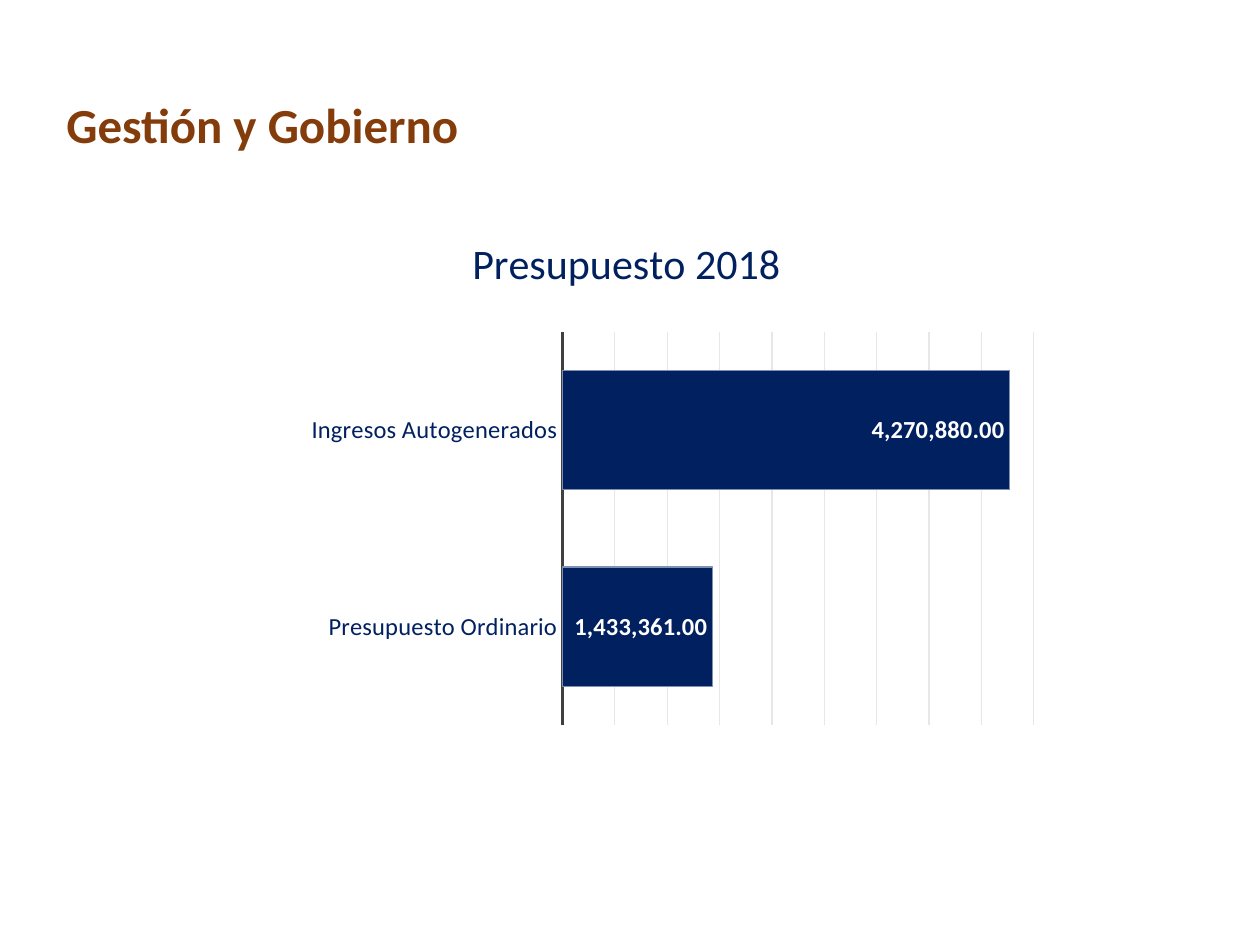
from lxml import etree
from pptx import Presentation
from pptx.chart.data import CategoryChartData
from pptx.dml.color import RGBColor
from pptx.enum import chart as kinds
from pptx.oxml import ns
from pptx.util import Cm, Pt

HEADING = "Gestión y Gobierno"
CHART_TITLE = "Presupuesto 2018"
BUDGET = {"Presupuesto Ordinario": 1433361, "Ingresos Autogenerados": 4270880}
NUMBER_FORMAT = "#,##0.00"

FONT = "Calibri"
BROWN = RGBColor(0x84, 0x3C, 0x0B)
NAVY = RGBColor(0x00, 0x20, 0x60)
WHITE = RGBColor(0xFF, 0xFF, 0xFF)
AXIS_GREY = RGBColor(0x40, 0x40, 0x40)
GRID_GREY = RGBColor(0xE7, 0xE7, 0xE7)
BAR_EDGE = RGBColor(0x7F, 0x8F, 0xAF)


def style(font, size, color, bold=False):
    font.name, font.size, font.bold = FONT, Pt(size), bold
    font.color.rgb = color


def place(parent, index, **settings):
    """Give a chart part a manual layout, in fractions of the chart."""
    for old in parent.findall(ns.qn("c:layout")):
        parent.remove(old)
    layout = etree.Element(ns.qn("c:layout"))
    manual = etree.SubElement(layout, ns.qn("c:manualLayout"))
    for name, value in settings.items():
        etree.SubElement(manual, ns.qn(f"c:{name}"), val=str(value))
    parent.insert(index, layout)


def add_heading(slide):
    box = slide.shapes.add_textbox(Cm(1.09), Cm(1.78), Cm(15.14), Cm(1.45))
    box.text_frame.word_wrap = True
    para = box.text_frame.paragraphs[0]
    para.text = HEADING
    style(para.font, 28, BROWN, bold=True)


def add_budget_chart(slide):
    data = CategoryChartData(number_format=NUMBER_FORMAT)
    data.categories = list(BUDGET)
    data.add_series("Presupuesto", list(BUDGET.values()))
    chart = slide.shapes.add_chart(
        kinds.XL_CHART_TYPE.BAR_CLUSTERED,
        Cm(3.63), Cm(4.04), Cm(17.93), Cm(11.02), data).chart
    style(chart.font, 14, NAVY)
    chart.has_legend = False

    chart.has_title = True
    title = chart.chart_title
    title.include_in_layout = False
    para = title.text_frame.paragraphs[0]
    para.text = CHART_TITLE
    style(para.font, 24, NAVY)
    place(title._element, 1, xMode="edge", yMode="edge", x=0.32, y=0.05)
    place(chart.plots[0]._element.getparent(), 0, layoutTarget="inner",
          xMode="edge", yMode="edge", x=0.43, y=0.24, w=0.53, h=0.72)

    categories = chart.category_axis
    categories.major_tick_mark = kinds.XL_TICK_MARK.NONE
    style(categories.tick_labels.font, 14, NAVY)
    categories.format.line.color.rgb = AXIS_GREY
    categories.format.line.width = Pt(1.5)

    values = chart.value_axis
    values.visible = False
    values.minimum_scale, values.maximum_scale = 0, 4500000
    values.major_unit = 500000
    values.has_major_gridlines = True
    values.major_gridlines.format.line.color.rgb = GRID_GREY
    values.major_gridlines.format.line.width = Pt(0.75)

    plot = chart.plots[0]
    plot.gap_width = 65
    plot.vary_by_categories = False
    bars = plot.series[0]
    bars.format.fill.solid()
    bars.format.fill.fore_color.rgb = NAVY
    bars.format.line.color.rgb = BAR_EDGE
    bars.format.line.width = Pt(0.75)

    labels = bars.data_labels
    labels.show_value = True
    labels.number_format = NUMBER_FORMAT
    labels.number_format_is_linked = False
    labels.position = kinds.XL_LABEL_POSITION.INSIDE_END
    style(labels.font, 14, WHITE, bold=True)


def main():
    deck = Presentation()
    deck.slide_width, deck.slide_height = Cm(25.4), Cm(19.05)
    slide = deck.slides.add_slide(deck.slide_layouts[6])
    add_heading(slide)
    add_budget_chart(slide)
    deck.save("out.pptx")


if __name__ == "__main__":
    main()
